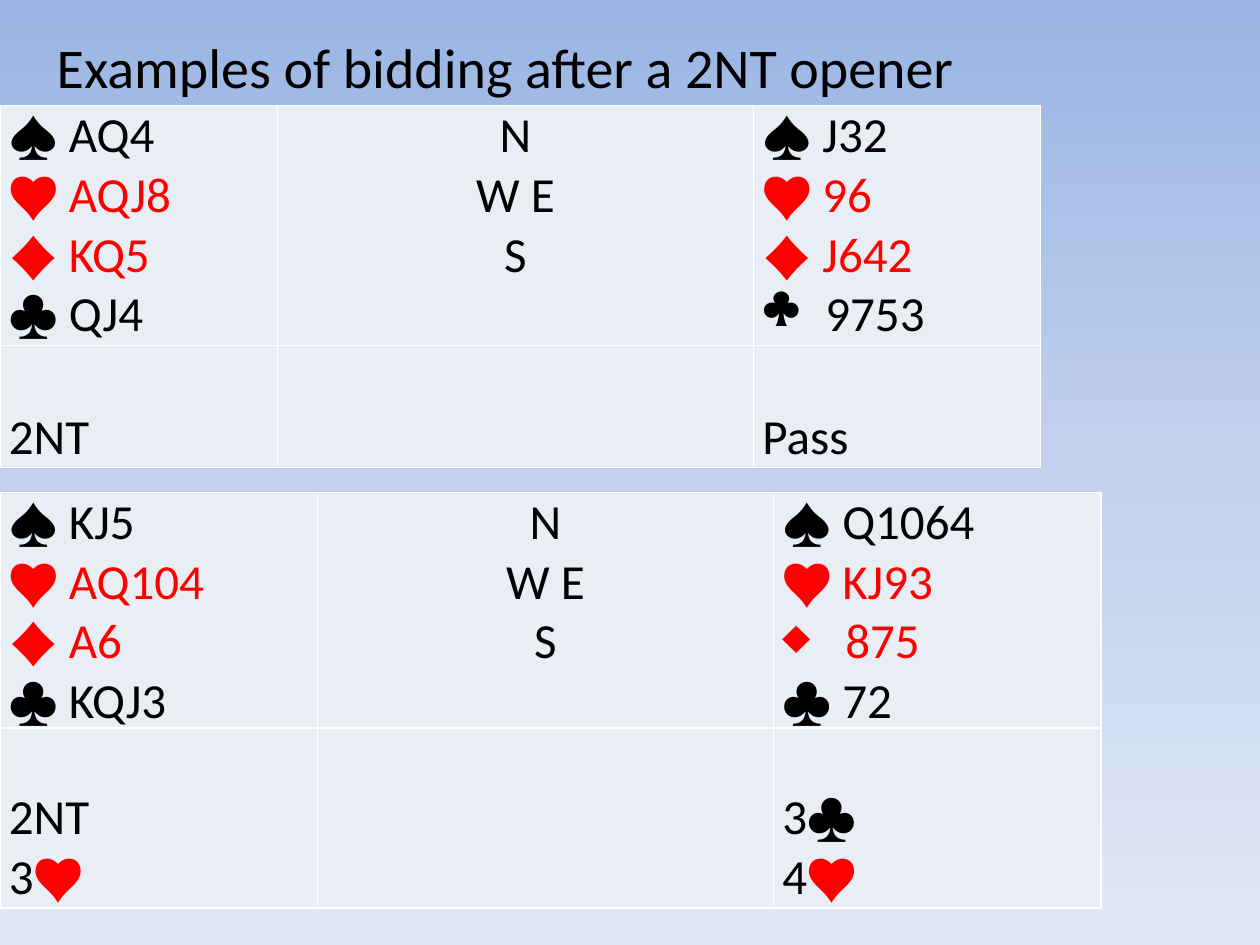
"""Build a bridge slide with two sample deals opened 2NT."""
from copy import deepcopy

from lxml import etree
from pptx import Presentation
from pptx.dml.color import RGBColor
from pptx.enum.text import MSO_ANCHOR, MSO_AUTO_SIZE, PP_ALIGN
from pptx.oxml.ns import qn
from pptx.util import Cm, Pt

LEFT, MID = PP_ALIGN.LEFT, PP_ALIGN.CENTER
TOP, BASE = MSO_ANCHOR.TOP, MSO_ANCHOR.BOTTOM
GROW = MSO_AUTO_SIZE.SHAPE_TO_FIT_TEXT

THEME = {
    "font": "Calibri", "title": Pt(32), "body": Pt(28),
    "ink": "000000", "red": "FF0000", "cell": "E9EDF4", "rule": "FFFFFF",
    "sky": [(0, "9AB5E4"), (0.5, "C2D1ED"), (1, "E1E8F5")],
}
TITLE = "Examples of bidding after a 2NT opener"
SEATS = ["N", "W E", "S"]
BULLET = "•"
DEALS = [
    {"top": 2.13, "cols": [5.59, 9.6, 5.79], "rows": [4.83, 2.46],
     "west": ["♠ AQ4", "♥ AQJ8", "♦ KQ5", "♣ QJ4"],
     "east": ["♠ J32", "♥ 96", "♦ J642", BULLET + "♣9753"],
     "bids": (["2NT"], ["Pass"])},
    {"top": 9.93, "cols": [6.4, 9.19, 6.6], "rows": [4.72, 3.63],
     "west": ["♠ KJ5", "♥ AQ104", "♦ A6", "♣ KQJ3"],
     "east": ["♠ Q1064", "♥ KJ93", BULLET + "♦875", "♣ 72"],
     "bids": (["2NT", "3♥"], ["3♣", "4♥"])},
]


def rgb(name):
    return RGBColor.from_string(THEME.get(name, name))


def tint(text):
    return rgb("red" if any(suit in text for suit in "♥♦") else "ink")


def style(para, size, color, align=LEFT):
    para.alignment = align
    para.font.name, para.font.size = THEME["font"], THEME[size]
    para.font.color.rgb = color


def add_bullet(para, mark):
    props = para._p.get_or_add_pPr()
    props.set("marL", str(Cm(1.27)))
    props.set("indent", str(-Cm(1.27)))
    etree.SubElement(props, qn("a:buChar"), char=mark)


def write_hand(para, line):
    text = line
    if line.startswith(BULLET):
        add_bullet(para, line[1])
        text = line[2:]
    para.add_run().text = text
    style(para, "body", tint(line))


def write_seat(para, line):
    para.add_run().text = line
    style(para, "body", rgb("ink"), MID)


def write_bid(para, line):
    level, suit = (line[0], line[1:]) if line[-1] in "♠♥♦♣" else (line, "")
    style(para, "body", rgb("ink"))
    for text in filter(None, (level, suit)):
        run = para.add_run()
        run.text = text
        run.font.color.rgb = tint(text)


def frame_cell(cell):
    cell.margin_left = cell.margin_right = Cm(0.18)
    cell.margin_top = cell.margin_bottom = 0
    props = cell._tc.get_or_add_tcPr()
    for side in "LRTB":
        line = etree.SubElement(props, qn(f"a:ln{side}"), w=str(Pt(1)))
        fill = etree.SubElement(line, qn("a:solidFill"))
        etree.SubElement(fill, qn("a:srgbClr"), val=THEME["rule"])
    cell.fill.solid()
    cell.fill.fore_color.rgb = rgb("cell")


def fill_cell(cell, lines, write, anchor):
    cell.vertical_anchor = anchor
    frame = cell.text_frame
    for i, line in enumerate(lines):
        write(frame.add_paragraph() if i else frame.paragraphs[0], line)


def add_deal(slide, deal):
    cols, rows = deal["cols"], deal["rows"]
    table = slide.shapes.add_table(len(rows), len(cols), 0, Cm(deal["top"]),
                                   Cm(sum(cols)), Cm(sum(rows))).table
    table.first_row = table.horz_banding = False
    for col, width in zip(table.columns, cols):
        col.width = Cm(width)
    for row, height in zip(table.rows, rows):
        row.height = Cm(height)
    for cell in table.iter_cells():
        frame_cell(cell)
    west, east = deal["bids"]
    fill_cell(table.cell(0, 0), deal["west"], write_hand, TOP)
    fill_cell(table.cell(0, 1), SEATS, write_seat, TOP)
    fill_cell(table.cell(0, 2), deal["east"], write_hand, TOP)
    fill_cell(table.cell(1, 0), west, write_bid, BASE)
    fill_cell(table.cell(1, 2), east, write_bid, BASE)


def paint_sky(slide):
    fill = slide.background.fill
    fill.gradient()
    fill.gradient_angle = 270
    stops = slide._element.find(".//" + qn("a:gsLst"))
    stops.append(deepcopy(stops[0]))
    for stop, (pos, color) in zip(fill.gradient_stops, THEME["sky"]):
        stop.position = pos
        stop.color.rgb = rgb(color)


def add_title(slide):
    title = slide.shapes.title
    title.left, title.top = Cm(0.89), Cm(0.53)
    title.width, title.height = Cm(18.82), Cm(1.63)
    frame = title.text_frame
    frame.text = TITLE
    frame.word_wrap, frame.auto_size = False, GROW
    frame.vertical_anchor = TOP
    style(frame.paragraphs[0], "title", rgb("ink"))


def main():
    deck = Presentation()
    deck.slide_width, deck.slide_height = Cm(25.4), Cm(19.05)
    slide = deck.slides.add_slide(deck.slide_layouts[5])
    paint_sky(slide)
    add_title(slide)
    for deal in DEALS:
        add_deal(slide, deal)
    deck.save("out.pptx")


if __name__ == "__main__":
    main()
